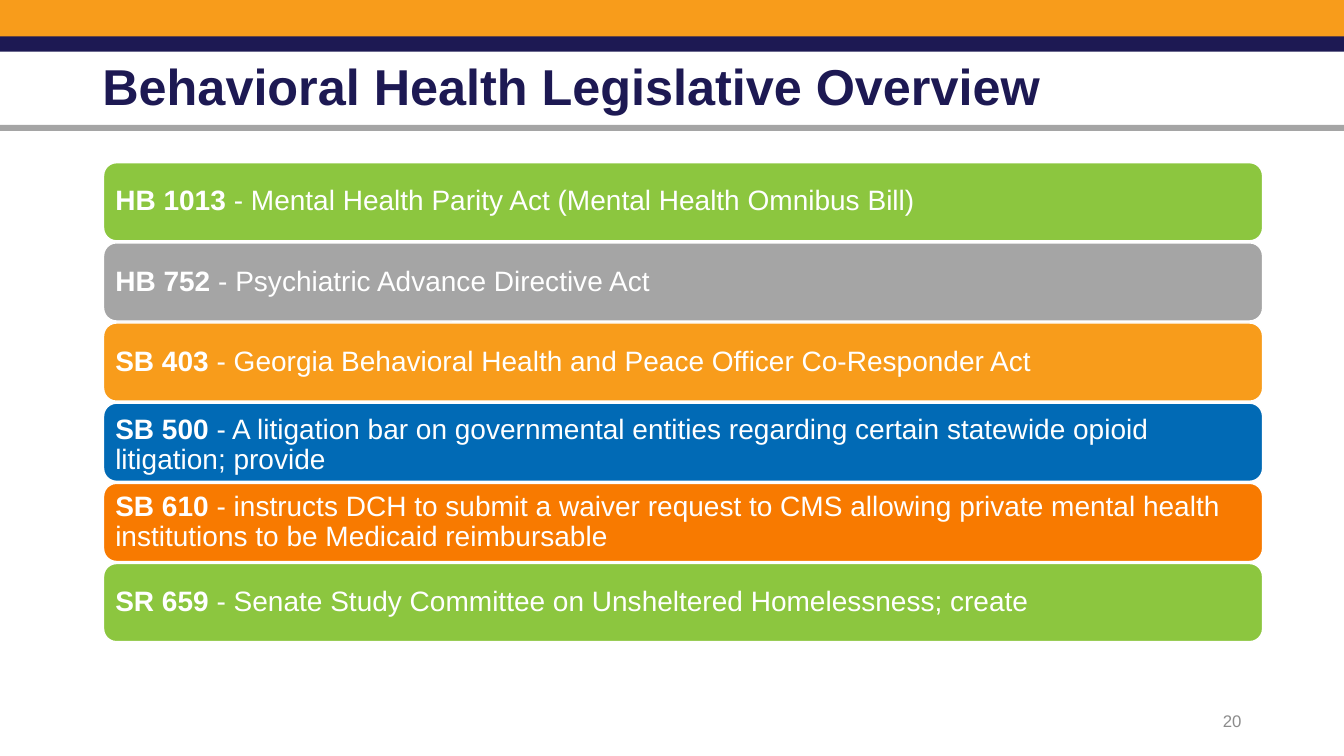
import pptx
import pptx.util
import pptx.dml.color
import pptx.enum.shapes
import pptx.enum.text
from pptx.util import Cm

SHAPE = pptx.enum.shapes.MSO_SHAPE
ANCHOR = pptx.enum.text.MSO_ANCHOR
ALIGN = pptx.enum.text.PP_ALIGN

COLORS = {
    "amber": "F89C1B",
    "navy": "1D1953",
    "gray": "A5A5A5",
    "green": "8CC63F",
    "blue": "016AB5",
    "orange": "F87A00",
    "white": "FFFFFF",
    "muted": "8C8C8C",
}


def color(name):
    return pptx.dml.color.RGBColor.from_string(COLORS[name])


class Deck:
    """Holds the style and the current slide."""

    font = "Arial"
    wide, high = 33.87, 19.05

    def __init__(self):
        self.file = pptx.Presentation()
        self.file.slide_width = Cm(self.wide)
        self.file.slide_height = Cm(self.high)
        self.slide = self.file.slides.add_slide(self.file.slide_layouts[6])

    def block(self, kind, box, fill, edge=None):
        shape = self.slide.shapes.add_shape(kind, *map(Cm, box))
        shape.shadow.inherit = False
        shape.fill.solid()
        shape.fill.fore_color.rgb = color(fill)
        if edge:
            shape.line.color.rgb = color(edge)
            shape.line.width = pptx.util.Pt(1)
        else:
            shape.line.fill.background()
        return shape

    def letter(self, shape, runs, size, tint, frame=None, para=None):
        """Fill a shape with one paragraph of (text, bold) runs."""
        body = shape.text_frame
        look = {"word_wrap": True, "vertical_anchor": ANCHOR.MIDDLE}
        line = body.paragraphs[0]
        form = {"alignment": ALIGN.LEFT}
        for item, values in ((body, look | (frame or {})),
                             (line, form | (para or {}))):
            for key, value in values.items():
                setattr(item, key, value)
        for text, bold in runs:
            run = line.add_run()
            run.text = text
            style = {"name": self.font, "size": pptx.util.Pt(size), "bold": bold}
            for key, value in style.items():
                setattr(run.font, key, value)
            run.font.color.rgb = color(tint)

    def label(self, box, text, size, tint, bold=False, para=None):
        shape = self.slide.shapes.add_textbox(*map(Cm, box))
        self.letter(shape, [(text, bold)], size, tint, para=para)

    def bill(self, box, fill, code, text, anchor):
        bar = self.block(SHAPE.ROUNDED_RECTANGLE, box, fill, "white")
        sides = ("left", "top", "right", "bottom")
        frame = {f"margin_{side}": Cm(0.2) for side in sides}
        frame["vertical_anchor"] = anchor
        self.letter(bar, [(code + " ", True), ("- " + text, False)], 20, "white",
                    frame, {"line_spacing": 0.9})


BANDS = [(0, 1.02, "amber"), (0.92, 0.38, "navy"), (3.15, 0.15, "gray")]

BILLS = [
    ("green", "HB 1013", "Mental Health Parity Act (Mental Health Omnibus Bill)"),
    ("gray", "HB 752", "Psychiatric Advance Directive Act"),
    ("amber", "SB 403",
     "Georgia Behavioral Health and Peace Officer Co-Responder Act"),
    ("blue", "SB 500", "A litigation bar on governmental entities regarding "
     "certain statewide opioid litigation; provide"),
    ("orange", "SB 610", "instructs DCH to submit a waiver request to CMS allowing "
     "private mental health institutions to be Medicaid reimbursable"),
    ("green", "SR 659",
     "Senate Study Committee on Unsheltered Homelessness; create"),
]


def main():
    deck = Deck()

    # Header bands and title
    for top, tall, fill in BANDS:
        deck.block(SHAPE.RECTANGLE, (0, top, deck.wide, tall), fill)
    deck.label((2.33, 0.41, 29.21, 3.68), "Behavioral Health Legislative Overview",
               36, "navy", True, {"line_spacing": 0.9})

    # Page number
    deck.label((23.92, 17.66, 7.62, 1.01), "20", 12, "muted",
               para={"alignment": ALIGN.RIGHT})

    # Bills, evenly stacked
    first, step = 4.1, 2.02
    for row, (fill, code, text) in enumerate(BILLS):
        anchor = ANCHOR.TOP if code == "SB 500" else ANCHOR.MIDDLE
        box = (2.61, first + row * step, 29.21, 1.97)
        deck.bill(box, fill, code, text, anchor)

    deck.file.save("out.pptx")


if __name__ == "__main__":
    main()
